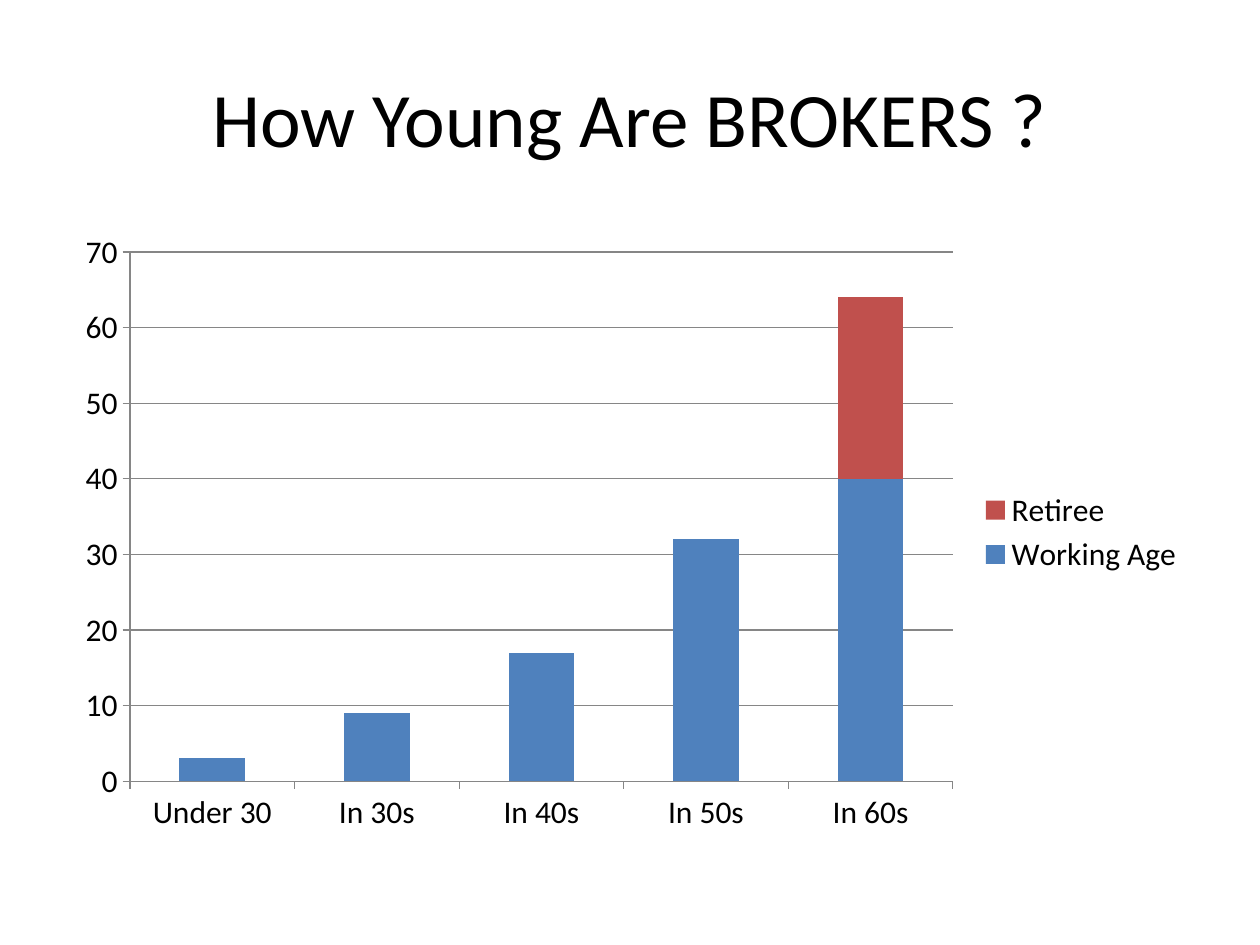
from pptx import Presentation
from pptx.chart.data import CategoryChartData
from pptx.dml.color import RGBColor
from pptx.enum.chart import XL_CHART_TYPE, XL_LEGEND_POSITION, XL_TICK_MARK
from pptx.enum.text import MSO_ANCHOR, PP_ALIGN
from pptx.util import Pt

STACKED = XL_CHART_TYPE.COLUMN_STACKED
LEGEND_RIGHT = XL_LEGEND_POSITION.RIGHT
TICK_OUTSIDE = XL_TICK_MARK.OUTSIDE
MIDDLE = MSO_ANCHOR.MIDDLE
CENTER = PP_ALIGN.CENTER

COLORS = {
    "text": "000000",
    "axis": "868686",
    "working": "4F81BD",
    "retiree": "C0504D",
}
AGE_GROUPS = ["Under 30", "In 30s", "In 40s", "In 50s", "In 60s"]
SERIES = [
    ("Working Age", [3, 9, 17, 32, 40], "working"),
    ("Retiree", [0, 0, 0, 0, 24], "retiree"),
]


class SlideBuilder:
    """Holds the style and the current slide."""

    font_name = "Calibri"

    def __init__(self, slide):
        self.slide = slide

    def color(self, name):
        return RGBColor.from_string(COLORS[name])

    def style_font(self, font, size):
        font.name = self.font_name
        font.size = Pt(size)
        font.color.rgb = self.color("text")

    def style_line(self, line):
        line.color.rgb = self.color("axis")
        line.width = Pt(0.75)

    def title(self, text, left, top, width, height, size):
        shape = self.slide.shapes.add_textbox(Pt(left), Pt(top), Pt(width), Pt(height))
        text_frame = shape.text_frame
        text_frame.word_wrap = True
        text_frame.vertical_anchor = MIDDLE
        text_frame.text = text
        paragraph = text_frame.paragraphs[0]
        paragraph.alignment = CENTER
        self.style_font(paragraph.runs[0].font, size)

    def stacked_columns(self, categories, series, left, top, width, height, size):
        chart_data = CategoryChartData()
        chart_data.categories = categories
        for name, values, _ in series:
            chart_data.add_series(name, values)
        chart = self.slide.shapes.add_chart(
            STACKED, Pt(left), Pt(top), Pt(width), Pt(height), chart_data
        ).chart
        chart.has_title = False
        self.style_font(chart.font, size)

        # Columns
        plot = chart.plots[0]
        plot.gap_width = 150
        plot.overlap = 100
        plot.vary_by_categories = False
        for column, (_, _, color_name) in zip(plot.series, series):
            column.format.fill.solid()
            column.format.fill.fore_color.rgb = self.color(color_name)

        # Axes and gridlines
        for axis in (chart.category_axis, chart.value_axis):
            axis.major_tick_mark = TICK_OUTSIDE
            self.style_line(axis.format.line)
        chart.value_axis.has_major_gridlines = True
        self.style_line(chart.value_axis.major_gridlines.format.line)

        # Legend
        chart.has_legend = True
        chart.legend.position = LEGEND_RIGHT
        chart.legend.include_in_layout = False


def main():
    presentation = Presentation()
    presentation.slide_width = Pt(720)
    presentation.slide_height = Pt(540)
    slide = presentation.slides.add_slide(presentation.slide_layouts[6])
    builder = SlideBuilder(slide)

    # Heading
    builder.title("How Young Are BROKERS ?", 36, 21.6, 648, 90, 44)

    # Age distribution
    builder.stacked_columns(AGE_GROUPS, SERIES, 36, 126, 648, 356.4, 18)

    presentation.save("out.pptx")


if __name__ == "__main__":
    main()
